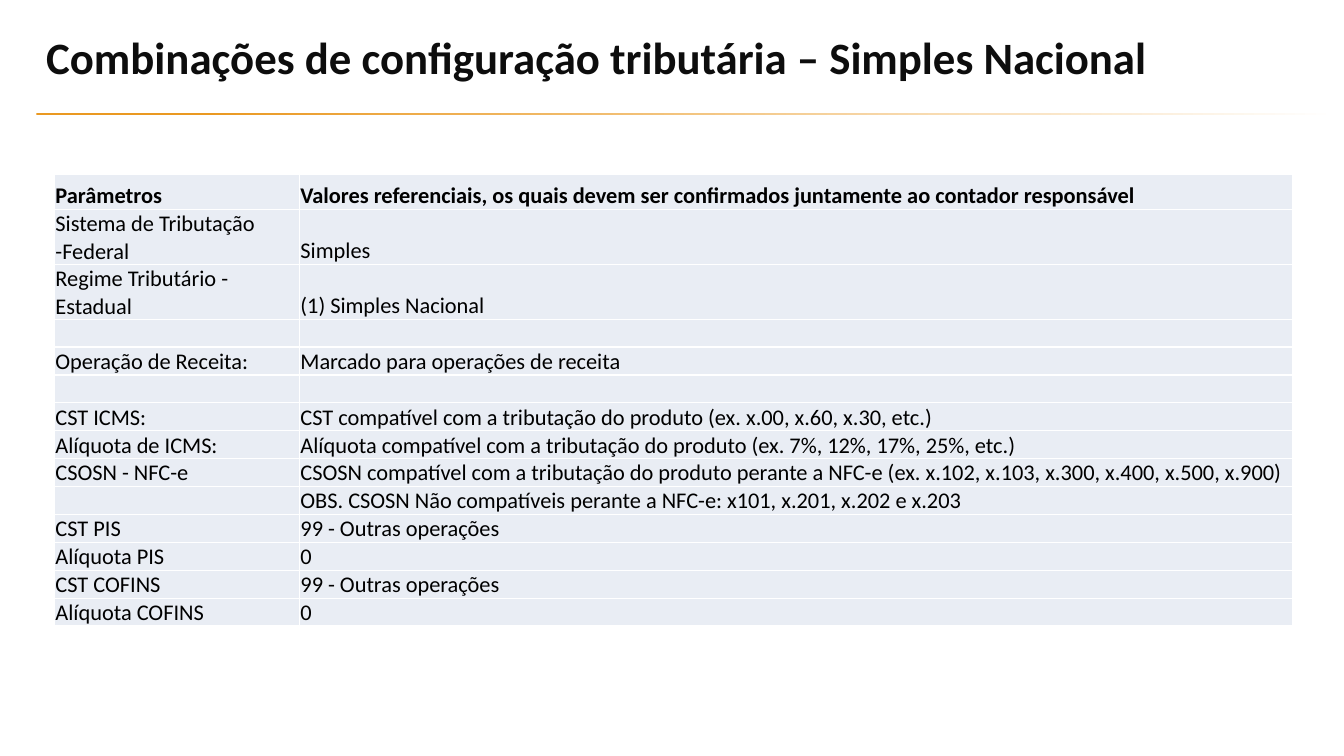
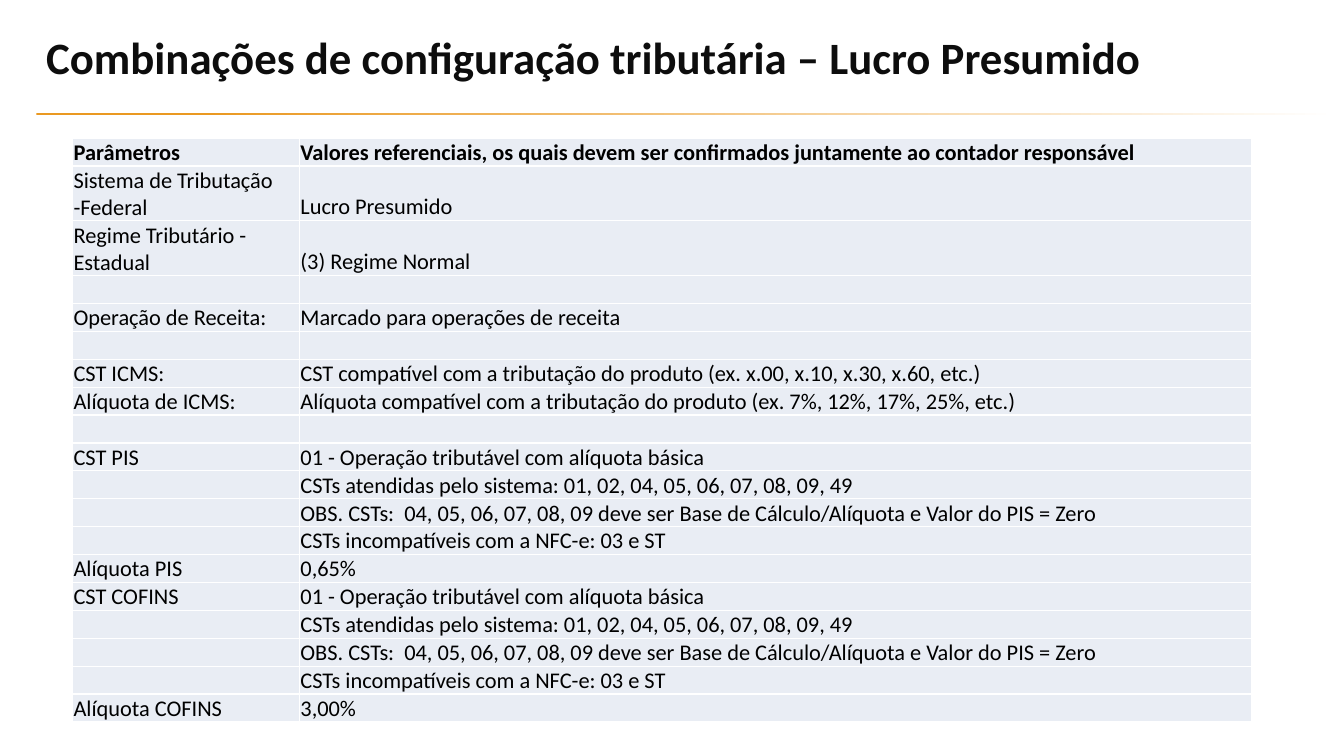
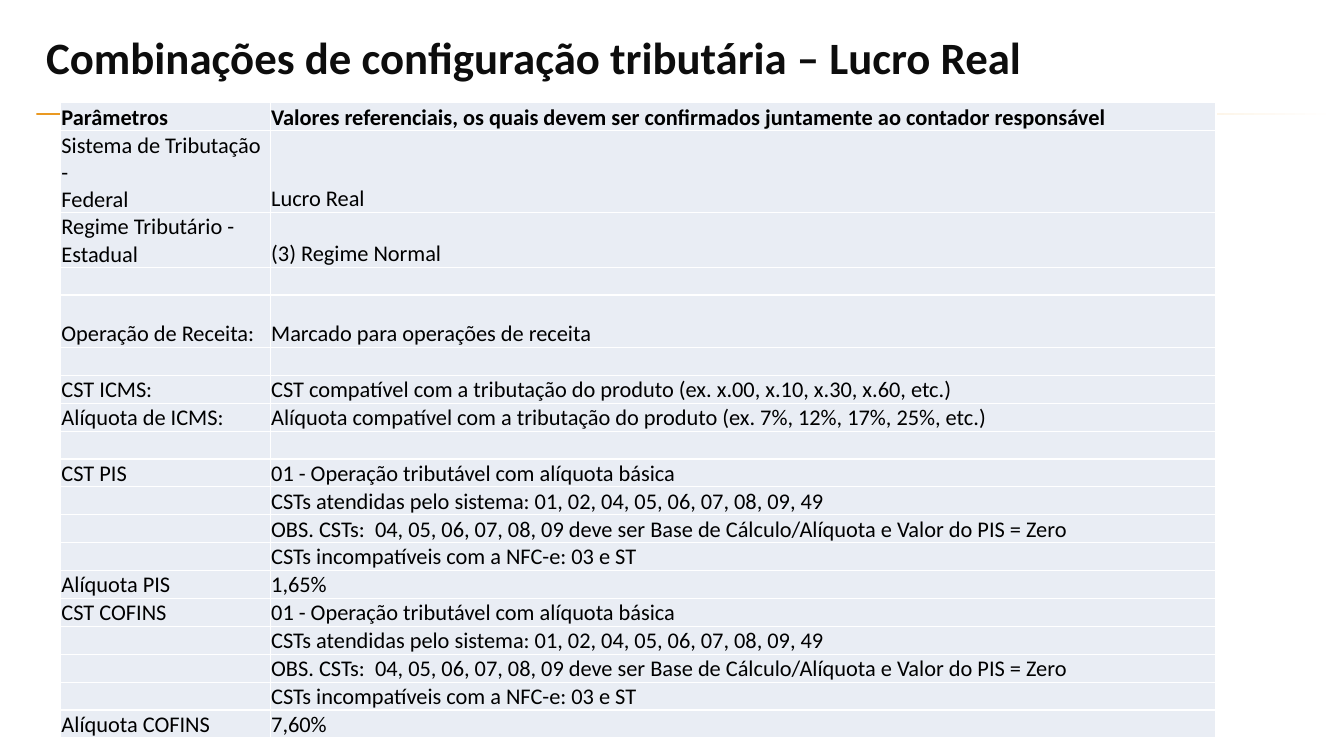
from lxml import etree
from pptx import Presentation
from pptx import util as u
from pptx.dml import color
from pptx.enum import shapes, text
from pptx.oxml import ns

COLORS = {
    "title": "0D0D0D",
    "text": "000000",
    "cell": "E9EDF4",
    "border": "FFFFFF",
    "rule_start": "EA9922",
    "rule_end": "FFFFFF",
}
FONT = "Calibri"
TITLE_SIZE, TABLE_SIZE = 32, 16
BORDER_WIDTH = 1


def rgb(name):
    return color.RGBColor.from_string(COLORS[name])


class Deck:
    """Shared style and the slide being built."""

    def __init__(self):
        self.presentation = Presentation()
        self.presentation.slide_width = u.Inches(13.33)
        self.presentation.slide_height = u.Inches(7.5)
        self.slide = None

    def add_slide(self, title):
        self.slide = self.presentation.slides.add_slide(self.presentation.slide_layouts[6])
        self.add_rule()
        self.add_title(title)

    def style(self, paragraph, size, color_name, bold):
        font = paragraph.font
        font.name, font.size, font.bold = FONT, u.Pt(size), bold
        font.color.rgb = rgb(color_name)

    def add_rule(self):
        rule = self.slide.shapes.add_shape(
            shapes.MSO_SHAPE.SNIP_2_SAME_RECTANGLE,
            u.Inches(0.36), u.Inches(1.12), u.Inches(12.89), u.Inches(0.02))
        rule.adjustments[0] = rule.adjustments[1] = 0
        rule.shadow.inherit = False
        rule.line.fill.background()
        rule.fill.gradient()
        rule.fill.gradient_angle = 0
        stops = ((0.13, "rule_start"), (1, "rule_end"))
        for stop, (position, name) in zip(rule.fill.gradient_stops, stops):
            stop.position = position
            stop.color.rgb = rgb(name)

    def add_title(self, title):
        box = self.slide.shapes.add_textbox(
            u.Inches(0.36), u.Inches(0.09), u.Inches(12.61), u.Inches(0.94))
        frame = box.text_frame
        frame.word_wrap = True
        frame.vertical_anchor = text.MSO_ANCHOR.MIDDLE
        frame.text = title
        self.style(frame.paragraphs[0], TITLE_SIZE, "title", True)

    def add_table(self, left, top, widths, rows, row_height, special_heights):
        heights = [special_heights.get(index, row_height) for index in range(len(rows))]
        table = self.slide.shapes.add_table(
            len(rows), len(widths), u.Inches(left), u.Inches(top),
            u.Inches(sum(widths)), u.Inches(sum(heights))).table
        table.first_row = table.horz_banding = False
        for column, width in zip(table.columns, widths):
            column.width = u.Inches(width)
        for row_index, (values, height) in enumerate(zip(rows, heights)):
            table.rows[row_index].height = u.Inches(height)
            for column_index, value in enumerate(values):
                wrapped_label = column_index == 0 and row_index in (1, 2)
                self.fill_cell(table.cell(row_index, column_index), value,
                               row_index == 0, wrapped_label)

    def fill_cell(self, cell, value, bold, at_top):
        cell.margin_left = cell.margin_right = cell.margin_top = u.Inches(0.01)
        cell.margin_bottom = 0
        cell.vertical_anchor = text.MSO_ANCHOR.TOP if at_top else text.MSO_ANCHOR.BOTTOM
        cell.text = value
        for paragraph in cell.text_frame.paragraphs:
            self.style(paragraph, TABLE_SIZE, "text", bold)
            if not value:  # an empty cell takes its line height from the end mark
                paragraph._p.get_or_add_endParaRPr().set("sz", str(TABLE_SIZE * 100))
        self.add_borders(cell)
        cell.fill.solid()
        cell.fill.fore_color.rgb = rgb("cell")

    def add_borders(self, cell):
        properties = cell._tc.get_or_add_tcPr()
        for side in ("a:lnL", "a:lnR", "a:lnT", "a:lnB"):
            line = etree.SubElement(properties, ns.qn(side), w=str(u.Pt(BORDER_WIDTH)))
            fill = etree.SubElement(line, ns.qn("a:solidFill"))
            etree.SubElement(fill, ns.qn("a:srgbClr"), val=COLORS["border"])


def opening_rows(system, regime, cst_examples, system_label="Sistema de Tributação  -Federal"):
    """Rows common to every tax regime, up to the ICMS rate."""
    return [
        ("Parâmetros", "Valores referenciais, os quais devem ser confirmados "
                       "juntamente ao contador responsável"),
        (system_label, system),
        ("Regime Tributário - Estadual", regime),
        ("", ""),
        ("Operação de Receita:", "Marcado para operações de receita"),
        ("", ""),
        ("CST ICMS:", f"CST compatível com a tributação do produto (ex. {cst_examples}, etc.)"),
        ("Alíquota de ICMS:",
         "Alíquota compatível com a tributação do produto (ex. 7%, 12%, 17%, 25%, etc.)"),
    ]


def tax_rows(tax, situation, rate, notes=()):
    return [(f"CST {tax}", situation), *(("", note) for note in notes), (f"Alíquota {tax}", rate)]


def normal_regime_rows(pis_rate, cofins_rate):
    situation = "01 - Operação tributável com alíquota básica"
    notes = (
        "CSTs atendidas pelo sistema: 01, 02, 04, 05, 06, 07, 08, 09, 49",
        "OBS. CSTs:  04, 05, 06, 07, 08, 09 deve ser Base de Cálculo/Alíquota "
        "e Valor do PIS = Zero",
        "CSTs incompatíveis com a NFC-e: 03 e ST",
    )
    return [("", ""), *tax_rows("PIS", situation, pis_rate, notes),
            *tax_rows("COFINS", situation, cofins_rate, notes)]


def main():
    deck = Deck()
    heading = "Combinações de configuração tributária – "
    normal_regime, normal_examples = "(3) Regime Normal", "x.00, x.10, x.30, x.60"

    # Simples Nacional
    deck.add_slide(heading + "Simples Nacional")
    other = "99 - Outras operações"
    rows = [
        *opening_rows("Simples", "(1) Simples Nacional", "x.00, x.60, x.30"),
        ("CSOSN - NFC-e", "CSOSN compatível com a tributação do produto perante a NFC-e "
                          "(ex. x.102, x.103, x.300, x.400, x.500, x.900)"),
        ("", "OBS. CSOSN Não compatíveis perante a NFC-e: x101, x.201, x.202 e x.203"),
        *tax_rows("PIS", other, "0"),
        *tax_rows("COFINS", other, "0"),
    ]
    deck.add_table(0.54, 1.73, (2.43, 9.85), rows, 0.27, {0: 0.35, 1: 0.54, 2: 0.54})

    # Lucro Presumido
    deck.add_slide(heading + "Lucro Presumido")
    rows = (opening_rows("Lucro Presumido", normal_regime, normal_examples)
            + normal_regime_rows("0,65%", "3,00%"))
    deck.add_table(0.72, 1.37, (2.25, 9.44), rows, 0.26, {1: 0.51, 2: 0.51})

    # Lucro Real
    deck.add_slide(heading + "Lucro Real")
    rows = (opening_rows("Lucro Real", normal_regime, normal_examples,
                         "Sistema de Tributação  -\nFederal")
            + normal_regime_rows("1,65%", "7,60%"))
    deck.add_table(0.6, 1.02, (2.08, 9.38), rows, 0.26, {1: 0.52, 2: 0.52, 4: 0.52})

    deck.presentation.save("out.pptx")


if __name__ == "__main__":
    main()
